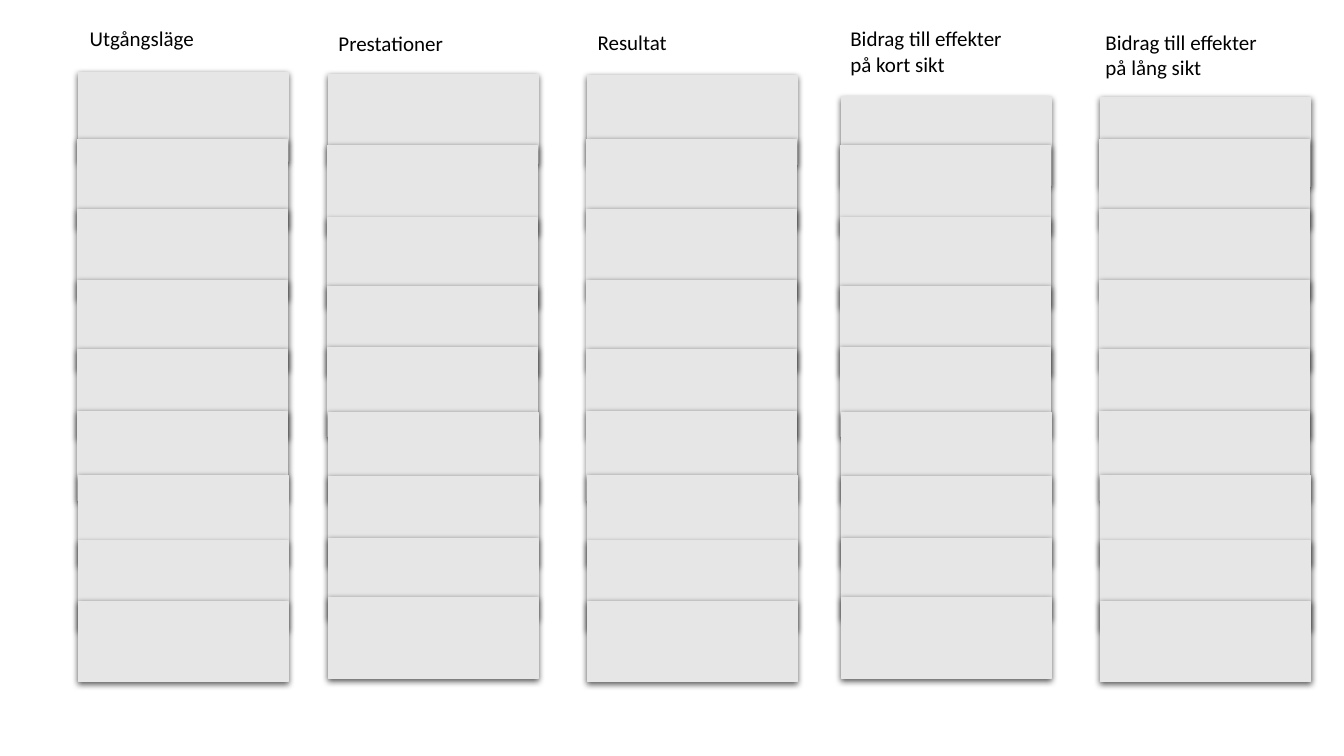
from lxml.etree import SubElement
from pptx import Presentation
from pptx.dml.color import RGBColor
from pptx.enum.shapes import MSO_SHAPE
from pptx.enum.text import MSO_AUTO_SIZE
from pptx.oxml.ns import qn
from pptx.util import Cm, Pt

GREY = RGBColor(0xE7, 0xE6, 0xE6)
BLACK = RGBColor(0, 0, 0)

# Row patterns in cm: tops below the first card, count of inset rows, full-height rows
ODD = {"tops": [3.51, 5.28, 7.07, 8.8, 10.37, 11.98, 13.63, 15.15], "inset": 5, "full": 8}
EVEN = {"tops": [3.66, 5.49, 7.21, 8.76, 10.39, 12.01, 13.56, 15.06], "inset": 4, "full": 7}

# Heading lines, heading box (left, top, width, height), card left, first top, rows
COLUMNS = [
    (["Utgångsläge"], (2.01, 0.53, 5.28, 0.89), 1.98, 1.83, ODD),
    (["Prestationer"], (8.28, 0.64, 5.33, 0.89), 8.28, 1.88, EVEN),
    (["Resultat"], (14.81, 0.61, 5.26, 0.89), 14.81, 1.9, ODD),
    (["Bidrag till effekter", "på kort sikt"], (21.18, 0.53, 5.28, 1.55), 21.21, 2.44, EVEN),
    (["Bidrag till effekter", "på lång sikt"], (27.61, 0.61, 5.46, 1.55), 27.74, 2.46, ODD),
]
WIDE, TALL, SHORT, STEP = 5.28, 2.24, 2.03, 0.02
FONT = {"name": "Calibri", "size": Pt(15)}
SHADOW = {"blurRad": Pt(4.5), "dist": Pt(1.5), "dir": 5400000,
          "algn": "ctr", "rotWithShape": 0}


def add_shade(card):
    card.shadow.inherit = False
    effects = card._element.spPr.find(qn("a:effectLst"))
    outer = SubElement(effects, qn("a:outerShdw"))
    for key, value in SHADOW.items():
        outer.set(key, str(value))
    tint = SubElement(outer, qn("a:srgbClr"), val=str(BLACK))
    SubElement(tint, qn("a:alpha"), val="63000")


def add_head(slide, lines, box):
    frame = slide.shapes.add_textbox(*map(Cm, box)).text_frame
    frame.word_wrap = True
    frame.auto_size = MSO_AUTO_SIZE.SHAPE_TO_FIT_TEXT
    frame.text = "\n".join(lines)
    for para in frame.paragraphs:
        for key, value in FONT.items():
            setattr(para.font, key, value)
        para.font.color.rgb = BLACK


def add_card(slide, left, top, high):
    card = slide.shapes.add_shape(
        MSO_SHAPE.RECTANGLE, Cm(left), Cm(top), Cm(WIDE), Cm(high))
    card.fill.solid()
    card.fill.fore_color.rgb = GREY
    card.line.color.rgb = GREY
    card.line.width = Pt(0.75)
    add_shade(card)


def main():
    deck = Presentation()
    deck.slide_width, deck.slide_height = Cm(33.87), Cm(19.05)
    slide = deck.slides.add_slide(deck.slide_layouts[6])

    # Each column: heading above a stack of overlapping cards
    for lines, box, left, first, rows in COLUMNS:
        add_head(slide, lines, box)
        for row, top in enumerate([first] + rows["tops"]):
            shift = STEP if 1 <= row <= rows["inset"] else 0
            high = TALL if row < rows["full"] else SHORT
            add_card(slide, left - shift, top, high)

    deck.save("out.pptx")


if __name__ == "__main__":
    main()
